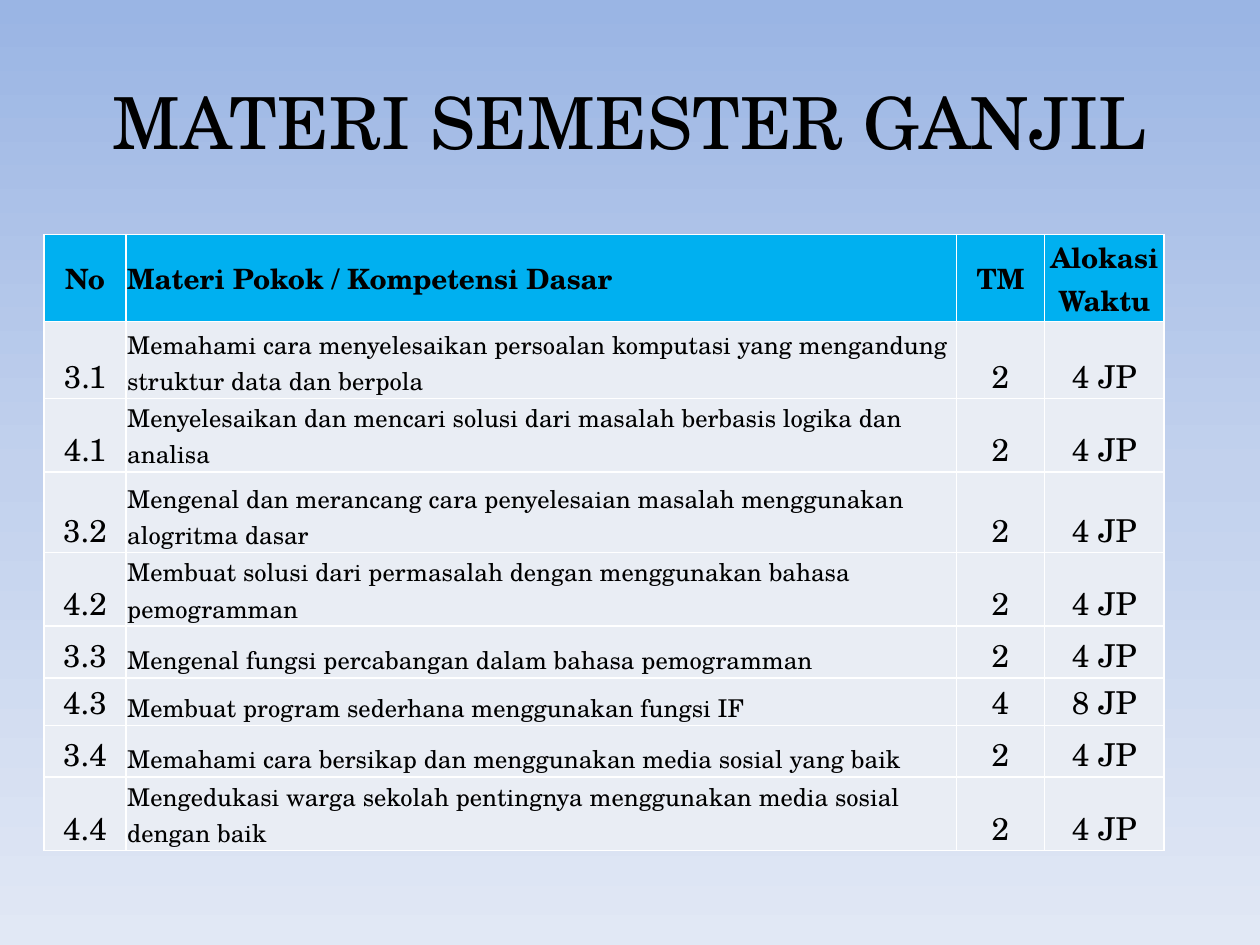
from copy import deepcopy
from dataclasses import dataclass

from lxml import etree
from pptx import Presentation
from pptx.dml.color import RGBColor
from pptx.enum.text import MSO_ANCHOR, MSO_AUTO_SIZE, PP_ALIGN
from pptx.oxml.ns import qn
from pptx.util import Inches, Pt

LEFT, CENTER = PP_ALIGN.LEFT, PP_ALIGN.CENTER
MIDDLE, BOTTOM = MSO_ANCHOR.MIDDLE, MSO_ANCHOR.BOTTOM
FIT_TEXT = MSO_AUTO_SIZE.TEXT_TO_FIT_SHAPE
TITLE_ONLY = 5


@dataclass(frozen=True)
class Theme:
    font: str = "TeX Gyre Schola"
    ink: str = "000000"
    header_fill: str = "00B0F0"
    body_fill: str = "E9EDF4"
    border: str = "FFFFFF"
    sky: tuple = ("9AB5E4", "C2D1ED", "E1E8F5")
    title_size: int = 44
    header_size: int = 16
    number_size: int = 18
    topic_size: int = 14


THEME = Theme()

HEADER = ("No", "Materi Pokok / Kompetensi Dasar", "TM", "Alokasi Waktu")
TOPICS = [
    ("3.1", "Memahami cara menyelesaikan persoalan komputasi yang mengandung "
            "struktur data dan berpola", "2", "4 JP"),
    ("4.1", "Menyelesaikan dan mencari solusi dari masalah berbasis logika dan "
            "analisa", "2", "4 JP"),
    ("3.2", "Mengenal dan merancang cara penyelesaian masalah menggunakan "
            "alogritma dasar", "2", "4 JP"),
    ("4.2", "Membuat solusi dari permasalah dengan menggunakan bahasa "
            "pemogramman", "2", "4 JP"),
    ("3.3", "Mengenal fungsi percabangan dalam bahasa pemogramman", "2", "4 JP"),
    ("4.3", "Membuat program sederhana menggunakan fungsi IF", "4", "8 JP"),
    ("3.4", "Memahami cara bersikap dan menggunakan media sosial yang baik",
     "2", "4 JP"),
    ("4.4", "Mengedukasi warga sekolah pentingnya menggunakan media sosial "
            "dengan baik", "2", "4 JP"),
]
TOPIC_COLUMN = 1
COLUMN_WIDTHS = (0.65, 6.59, 0.7, 0.95)
ROW_HEIGHTS = (0.62, 0.61, 0.34, 0.64, 0.41, 0.41, 0.34, 0.41, 0.41)


def paint_background(page):
    """Vertical gradient with evenly spaced stops."""
    fill = page.background.fill
    fill.gradient()
    fill.gradient_angle = 270
    first, last = fill.gradient_stops
    first_stop = page.background._cSld.find(".//" + qn("a:gs"))
    first_stop.addnext(deepcopy(first_stop))
    for index, (stop, color) in enumerate(zip(fill.gradient_stops, THEME.sky)):
        stop.color.rgb = RGBColor.from_string(color)
        stop.position = index / (len(THEME.sky) - 1)


def style_text(frame, size, align, bold=False):
    for para in frame.paragraphs:
        para.alignment = align
        para.font.name = THEME.font
        para.font.size = Pt(size)
        para.font.bold = bold
        para.font.color.rgb = RGBColor.from_string(THEME.ink)


def add_title(page, text):
    title = page.shapes.title
    title.left, title.top = Inches(0.5), Inches(0.3)
    title.width, title.height = Inches(9), Inches(1.25)
    frame = title.text_frame
    frame.text = text
    frame.vertical_anchor = MIDDLE
    frame.auto_size = FIT_TEXT
    style_text(frame, THEME.title_size, CENTER)


def add_borders(cell):
    """Thin solid lines on all four sides, placed before the cell's fill."""
    properties = cell._tc.get_or_add_tcPr()
    for index, side in enumerate(("lnL", "lnR", "lnT", "lnB")):
        line = etree.Element(qn("a:" + side), w=str(Pt(1)))
        solid = etree.SubElement(line, qn("a:solidFill"))
        etree.SubElement(solid, qn("a:srgbClr"), val=THEME.border)
        properties.insert(index, line)


def fill_cell(cell, text, is_header, is_topic):
    cell.text = text
    cell.margin_left = cell.margin_right = cell.margin_top = Inches(0.01)
    cell.margin_bottom = 0
    cell.vertical_anchor = MIDDLE if is_header else BOTTOM
    cell.fill.solid()
    cell.fill.fore_color.rgb = RGBColor.from_string(
        THEME.header_fill if is_header else THEME.body_fill)
    add_borders(cell)
    body_size = THEME.topic_size if is_topic else THEME.number_size
    style_text(cell.text_frame, THEME.header_size if is_header else body_size,
               LEFT if is_topic else CENTER, bold=is_header)


def add_topic_table(page):
    rows = [HEADER, *TOPICS]
    table = page.shapes.add_table(
        len(rows), len(HEADER), Inches(0.35), Inches(1.86),
        Inches(sum(COLUMN_WIDTHS)), Inches(sum(ROW_HEIGHTS))).table
    table.first_row = table.horz_banding = False
    for column, width in zip(table.columns, COLUMN_WIDTHS):
        column.width = Inches(width)
    for row, height in zip(table.rows, ROW_HEIGHTS):
        row.height = Inches(height)
    for row_index, texts in enumerate(rows):
        for column_index, text in enumerate(texts):
            fill_cell(table.cell(row_index, column_index), text,
                      row_index == 0, column_index == TOPIC_COLUMN)


def main():
    deck = Presentation()
    deck.slide_width, deck.slide_height = Inches(10), Inches(7.5)
    page = deck.slides.add_slide(deck.slide_layouts[TITLE_ONLY])
    paint_background(page)
    add_title(page, "MATERI SEMESTER GANJIL")
    add_topic_table(page)
    deck.save("out.pptx")


if __name__ == "__main__":
    main()
